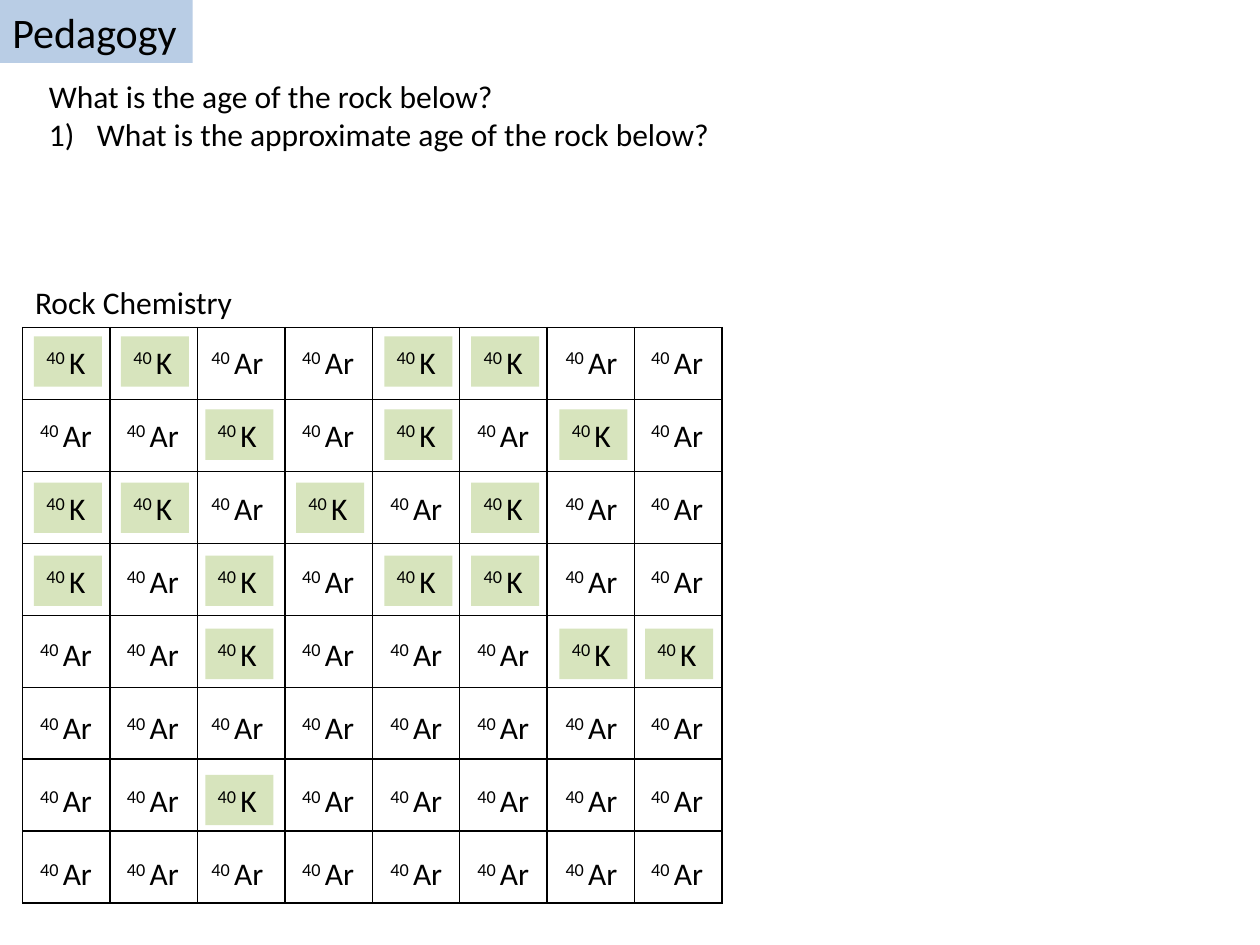
import pptx
import pptx.dml.color
import pptx.enum.text
import pptx.oxml.ns
import pptx.util
from lxml import etree
from pptx.util import Inches


def rgb(value):
    return pptx.dml.color.RGBColor.from_string(value)


def add_text(lines, x, y, w, h, size=18, fill=None, grow=True, numbered=()):
    """Add a text box; each line is a list of (text, baseline in percent) runs."""
    sp = slide.shapes.add_textbox(Inches(x), Inches(y), Inches(w), Inches(h))
    if fill:
        sp.fill.solid()
        sp.fill.fore_color.rgb = rgb(fill)
    tf = sp.text_frame
    tf.word_wrap = False
    sizing = pptx.enum.text.MSO_AUTO_SIZE
    tf.auto_size = sizing.SHAPE_TO_FIT_TEXT if grow else sizing.NONE
    for i, runs in enumerate(lines):
        p = tf.paragraphs[0] if i == 0 else tf.add_paragraph()
        if i in numbered:
            pPr = p._p.get_or_add_pPr()
            pPr.set("marL", str(Inches(0.38)))
            pPr.set("indent", str(-Inches(0.38)))
            number = etree.SubElement(pPr, pptx.oxml.ns.qn("a:buAutoNum"))
            number.set("type", "arabicParenR")
        for text, baseline in runs:
            r = p.add_run()
            r.text = text
            r.font.name = "Calibri"
            r.font.size = pptx.util.Pt(size)
            r.font.color.rgb = rgb("000000")
            if baseline:
                r._r.get_or_add_rPr().set("baseline", str(baseline * 1000))


prs = pptx.Presentation()
prs.slide_width = Inches(10)
prs.slide_height = Inches(7.5)
slide = prs.slides.add_slide(prs.slide_layouts[6])

# Heading and question
add_text([[("Pedagogy", 0)]], 0, 0, 1.53, 0.5, size=24, fill="B9CDE5")
add_text(
    [[("What is the age of the rock below?", 0)],
     [("What is the approximate age of the rock below?", 0)]],
    0.29, 0.56, 5.5, 1.01, grow=False, numbered=(1,))

# Atoms in the rock, one letter per cell: K = potassium, A = argon
rock = [
    "KKAAKKAA",
    "AAKAKAKA",
    "KKAKAKAA",
    "KAKAKKAA",
    "AAKAAAKK",
    "AAAAAAAA",
    "AAKAAAAA",
    "AAAAAAAA",
]
n = len(rock)

# Empty grid
table = slide.shapes.add_table(
    n, n, Inches(0.18), Inches(2.6), Inches(5.55), Inches(4.57)).table
table.first_row = False
table.horz_banding = False
for column in table.columns:
    column.width = Inches(5.55 / n)
for row in table.rows:
    row.height = Inches(4.57 / n)
for cell in table.iter_cells():
    tcPr = cell._tc.get_or_add_tcPr()
    for side in ("lnL", "lnR", "lnT", "lnB"):
        ln = etree.SubElement(tcPr, pptx.oxml.ns.qn("a:" + side), w="12700")
        line_fill = etree.SubElement(ln, pptx.oxml.ns.qn("a:solidFill"))
        etree.SubElement(line_fill, pptx.oxml.ns.qn("a:srgbClr"), val="000000")
    cell.fill.background()

# Atom labels
column_lefts = [0.22, 0.91, 1.58, 2.3, 3, 3.69, 4.39, 5.07]
row_step = 0.58
for i, row_atoms in enumerate(rock):
    y = 2.67 + i * row_step
    for x, atom in zip(column_lefts, row_atoms):
        if atom == "K":
            add_text([[("40 ", 30), ("K", 0)]], x + 0.05, y, 0.54, 0.4, fill="D7E4BD")
        else:
            add_text([[("40 ", 30), ("Ar", 0)]], x, y, 0.64, 0.4)

add_text([[("Rock Chemistry", 0)]], 0.18, 2.2, 1.79, 0.4)

prs.save("out.pptx")
